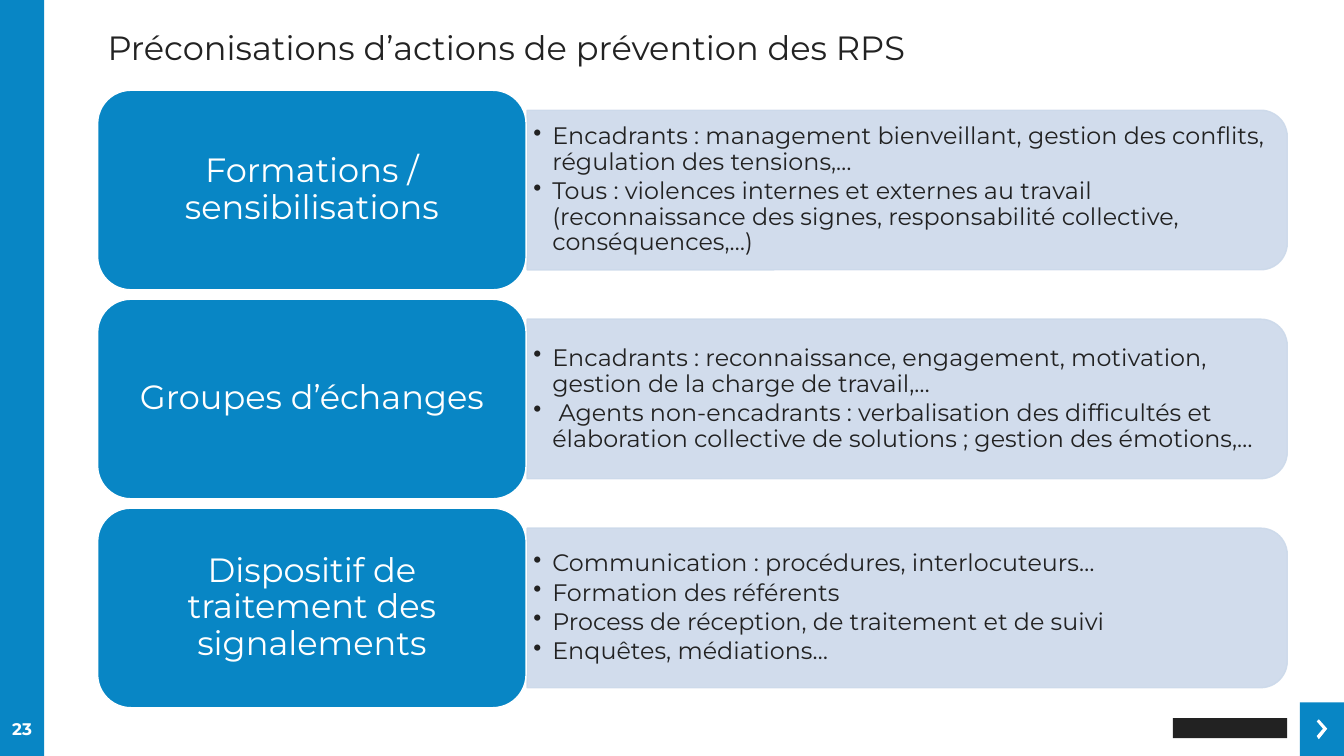
"""Build the slide on recommended actions to prevent psychosocial risks."""
from dataclasses import dataclass

from lxml import etree
from pptx import Presentation
from pptx.dml.color import RGBColor
from pptx.enum.shapes import MSO_SHAPE
from pptx.enum.text import MSO_ANCHOR, PP_ALIGN
from pptx.oxml.ns import qn
from pptx.util import Emu, Pt

RECTANGLE = MSO_SHAPE.RECTANGLE
ROUNDED = MSO_SHAPE.ROUNDED_RECTANGLE
ROUNDED_TOP = MSO_SHAPE.ROUND_2_SAME_RECTANGLE
MIDDLE = MSO_ANCHOR.MIDDLE
CENTER = PP_ALIGN.CENTER
LEFT = PP_ALIGN.LEFT
PX = 9525


@dataclass(frozen=True)
class Theme:
    font: str = "Montserrat"
    blue: RGBColor = RGBColor(0x08, 0x86, 0xC5)
    pale: RGBColor = RGBColor(0xCC, 0xD9, 0xEA)
    ink: RGBColor = RGBColor(0x22, 0x22, 0x22)
    white: RGBColor = RGBColor(0xFF, 0xFF, 0xFF)
    heading: Pt = Pt(24)
    body: Pt = Pt(17)
    number: Pt = Pt(12)


theme = Theme()
ROWS = [
    ("Formations / sensibilisations", [
        "Encadrants : management bienveillant, gestion des conflits, "
        "régulation des tensions,…",
        "Tous : violences internes et externes au travail (reconnaissance des "
        "signes, responsabilité collective, conséquences,…)",
    ]),
    ("Groupes d’échanges", [
        "Encadrants : reconnaissance, engagement, motivation, "
        "gestion de la charge de travail,…",
        " Agents non-encadrants : verbalisation des difficultés et "
        "élaboration collective de solutions ; gestion des émotions,…",
    ]),
    ("Dispositif de traitement des signalements", [
        "Communication : procédures, interlocuteurs…",
        "Formation des référents",
        "Process de réception, de traitement et de suivi",
        "Enquêtes, médiations…",
    ]),
]
ROW_TOP, ROW_PITCH, ROW_HEIGHT = 86, 199, 190
LABEL_LEFT, LABEL_WIDTH = 93, 408
PANEL_LEFT, PANEL_WIDTH, PANEL_HEIGHT = 502, 724, 152
BULLET_INDENT = 18

presentation = Presentation()
presentation.slide_width = Emu(1280 * PX)
presentation.slide_height = Emu(720 * PX)
slide = presentation.slides.add_slide(presentation.slide_layouts[6])


def add_block(kind, left, top, width, height, fill, line=None):
    """Add a preset shape, outlined only when a line colour is given."""
    shape = slide.shapes.add_shape(
        kind, left * PX, top * PX, width * PX, height * PX)
    shape.shadow.inherit = False
    shape.fill.solid()
    shape.fill.fore_color.rgb = fill
    if line is None:
        shape.line.fill.background()
    else:
        shape.line.color.rgb = line
        shape.line.width = Pt(1)
    return shape


def write(shape, texts, size, color, align, wrap=True):
    """Write one paragraph per text, centred vertically in the shape."""
    frame = shape.text_frame
    frame.word_wrap = wrap
    frame.vertical_anchor = MIDDLE
    frame.text = "\n".join(texts)
    for paragraph in frame.paragraphs:
        paragraph.alignment = align
        paragraph.font.name = theme.font
        paragraph.font.size = size
        paragraph.font.color.rgb = color
    return frame.paragraphs


add_block(RECTANGLE, 0, 0, 42, 720, theme.blue)
add_block(RECTANGLE, 1238, 669, 42, 51, theme.blue)
add_block(RECTANGLE, 1117, 684, 109, 19, theme.ink)

builder = slide.shapes.build_freeform(1254, 687, scale=PX)
builder.add_line_segments(
    [(1260, 694), (1254, 701), (1256, 704), (1264, 694), (1256, 685)])
chevron = builder.convert_to_shape()
chevron.shadow.inherit = False
chevron.fill.solid()
chevron.fill.fore_color.rgb = theme.white
chevron.line.fill.background()

title = slide.shapes.add_textbox(93 * PX, 21 * PX, 1098 * PX, 48 * PX)
write(title, ["Préconisations d’actions de prévention des RPS"],
      theme.heading, theme.ink, LEFT)

page_number = slide.shapes.add_textbox(0, 675 * PX, 42 * PX, 38 * PX)
write(page_number, ["23"], theme.number, theme.white, CENTER,
      wrap=False)[0].font.bold = True

for row, (heading, actions) in enumerate(ROWS):
    top = ROW_TOP + row * ROW_PITCH
    middle = top + ROW_HEIGHT // 2

    panel = add_block(
        ROUNDED_TOP, PANEL_LEFT + (PANEL_WIDTH - PANEL_HEIGHT) // 2,
        middle - PANEL_WIDTH // 2, PANEL_HEIGHT, PANEL_WIDTH,
        theme.pale, theme.pale)
    panel.rotation = 90
    for color in panel._element.spPr.iter(qn("a:srgbClr")):
        etree.SubElement(color, qn("a:alpha"), val="90000")

    details = slide.shapes.add_textbox(
        501 * PX, (middle - 69) * PX, 718 * PX, 138 * PX)
    frame = details.text_frame
    frame.margin_left = frame.margin_right = 7 * PX
    frame.margin_top = frame.margin_bottom = 4 * PX
    for paragraph in write(details, actions, theme.body, theme.ink, LEFT):
        paragraph.line_spacing = 0.9
        paragraph.space_after = Pt(2.5)
        properties = paragraph._p.get_or_add_pPr()
        properties.set("marL", str(BULLET_INDENT * PX))
        properties.set("indent", str(-BULLET_INDENT * PX))
        bullet = etree.Element(qn("a:buChar"), char="•")
        properties.find(qn("a:defRPr")).addprevious(bullet)

    label = add_block(ROUNDED, LABEL_LEFT, top, LABEL_WIDTH, ROW_HEIGHT,
                      theme.blue, theme.white)
    write(label, [heading], theme.heading, theme.white,
          CENTER)[0].line_spacing = 0.9

presentation.save("out.pptx")
